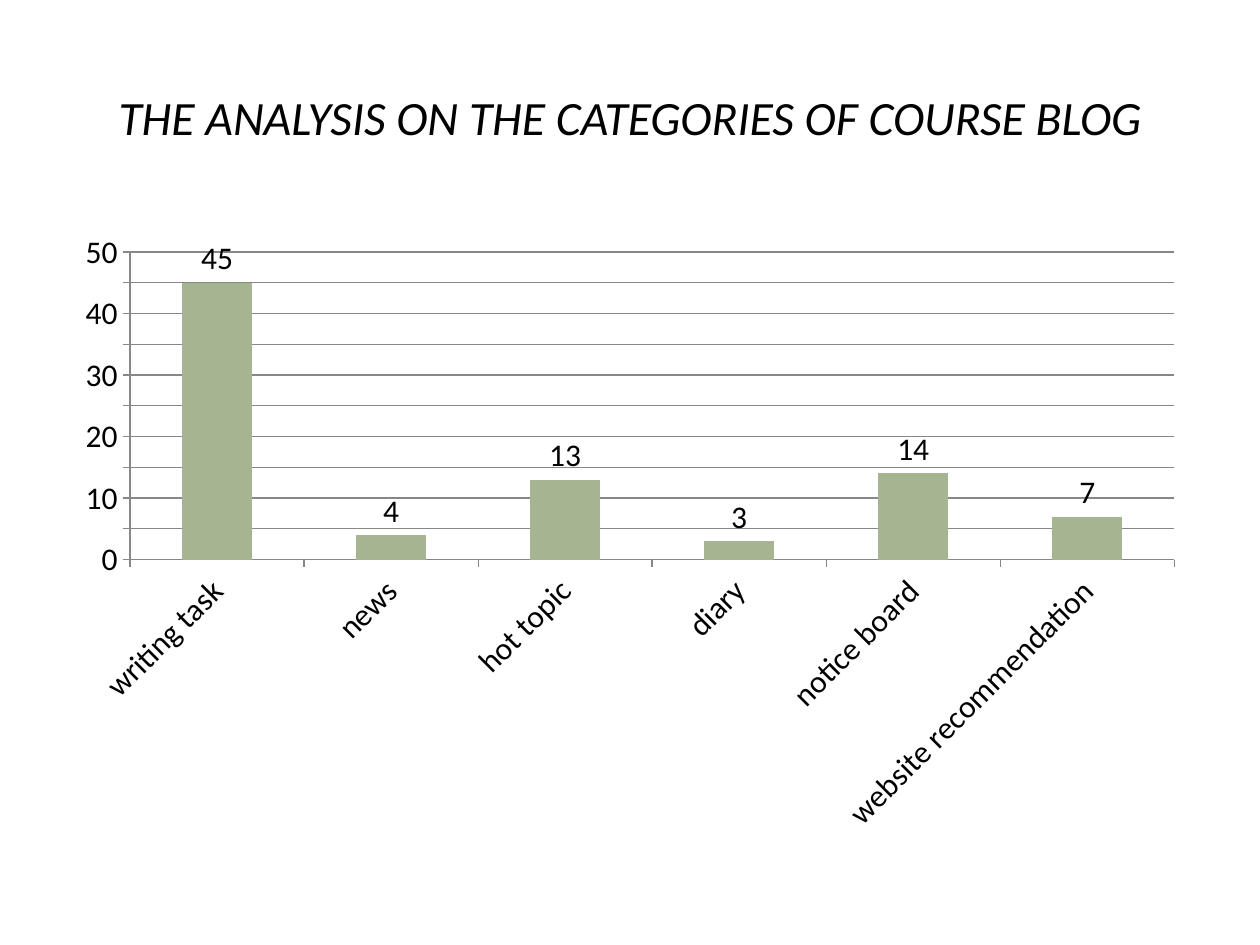
from pptx import Presentation
from pptx.chart.data import CategoryChartData
from pptx.dml.color import RGBColor as RGB
from pptx.enum.chart import XL_CHART_TYPE as CT, XL_LABEL_POSITION as LP, XL_TICK_MARK as TM
from pptx.enum.text import MSO_ANCHOR as ANCHOR, MSO_AUTO_SIZE as AUTOSIZE, PP_ALIGN as ALIGN
from pptx.util import Inches, Pt

COLORS = {"text": "000000", "bar": "A5B592", "grid": "878787"}
FONT = "Calibri"
CATEGORY_COUNTS = {
    "writing task": 45,
    "news": 4,
    "hot topic": 13,
    "diary": 3,
    "notice board": 14,
    "website recommendation": 7,
}


class SlideBuilder:
    """Holds the style and the current slide, and adds each kind of element."""

    def __init__(self, prs):
        self.slide = prs.slides.add_slide(prs.slide_layouts[5])

    def color(self, name):
        return RGB.from_string(COLORS[name])

    def apply(self, obj, **values):
        for name, value in values.items():
            setattr(obj, name, value)

    def style_font(self, font, size, **values):
        self.apply(font, name=FONT, size=Pt(size), **values)
        font.color.rgb = self.color("text")

    def title(self, text, x, y, w, h, size):
        sp = self.slide.shapes.title
        self.apply(sp, left=Inches(x), top=Inches(y), width=Inches(w), height=Inches(h))
        tf = sp.text_frame
        self.apply(tf, word_wrap=True, auto_size=AUTOSIZE.NONE, vertical_anchor=ANCHOR.MIDDLE)
        p = tf.paragraphs[0]
        p.alignment = ALIGN.CENTER
        r = p.add_run()
        r.text = text
        self.style_font(r.font, size, italic=True)

    def column_chart(self, counts, x, y, w, h, size):
        data = CategoryChartData()
        data.categories = list(counts)
        data.add_series("Series 1", list(counts.values()))
        chart = self.slide.shapes.add_chart(
            CT.COLUMN_CLUSTERED, Inches(x), Inches(y), Inches(w), Inches(h), data
        ).chart
        self.apply(chart, has_legend=False, has_title=False)
        self.style_font(chart.font, size)

        plot = chart.plots[0]
        self.apply(plot, gap_width=150, vary_by_categories=False, has_data_labels=True)
        self.apply(plot.data_labels, show_value=True, position=LP.OUTSIDE_END)
        self.style_font(plot.data_labels.font, size)
        fill = plot.series[0].format.fill
        fill.solid()
        fill.fore_color.rgb = self.color("bar")

        value_axis = chart.value_axis
        self.apply(value_axis, minimum_scale=0, maximum_scale=50, major_unit=5,
                   has_major_gridlines=True)
        for axis in (chart.category_axis, value_axis):
            self.apply(axis, major_tick_mark=TM.OUTSIDE, minor_tick_mark=TM.NONE)
        for part in (chart.category_axis, value_axis, value_axis.major_gridlines):
            part.format.line.color.rgb = self.color("grid")
            part.format.line.width = Pt(0.75)


def main():
    prs = Presentation()
    prs.slide_width, prs.slide_height = Inches(10), Inches(7.5)
    s = SlideBuilder(prs)
    s.title("THE ANALYSIS ON THE CATEGORIES OF COURSE BLOG", 0.5, 0.3, 9, 1.25, 27.3)
    s.column_chart(CATEGORY_COUNTS, 0.5, 1.75, 9, 4.95, 18)
    prs.save("out.pptx")


if __name__ == "__main__":
    main()
